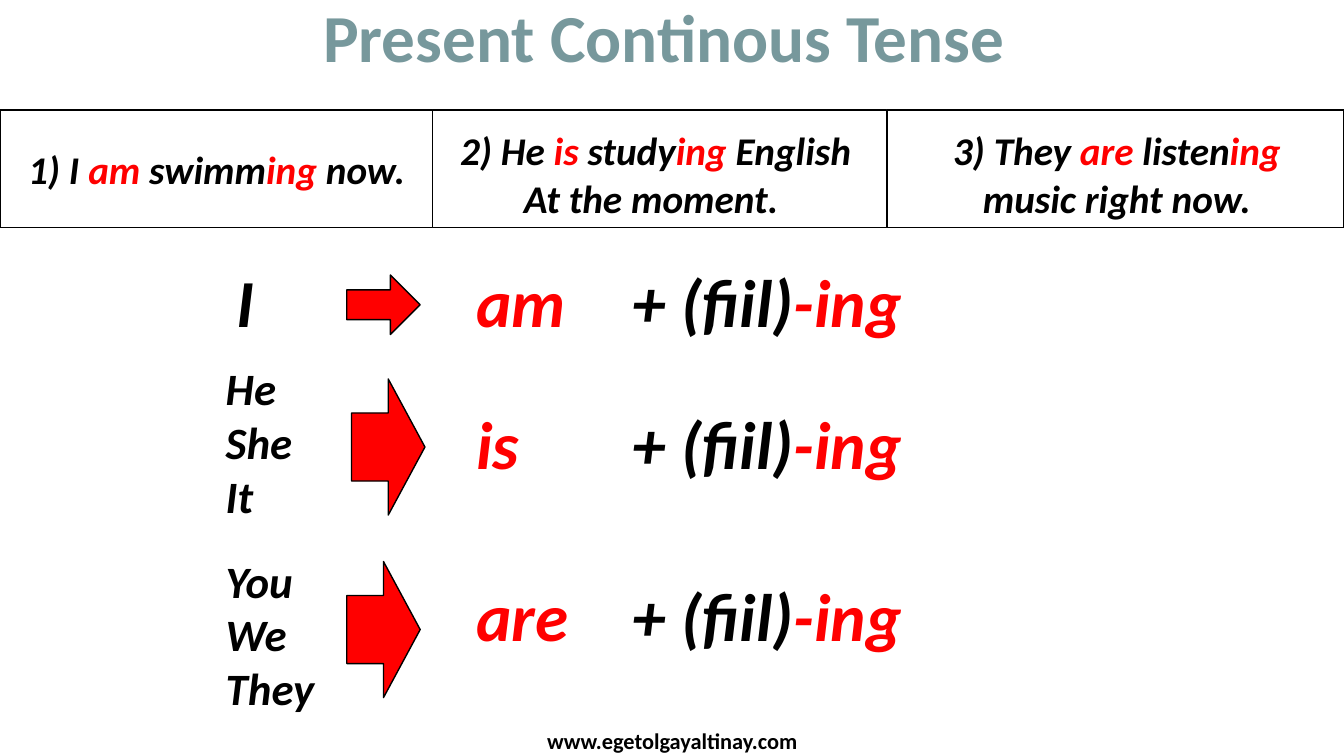
from pptx import Presentation
from pptx.dml.color import RGBColor
from pptx.enum.shapes import MSO_SHAPE
from pptx.enum.text import PP_ALIGN
from pptx.util import Cm, Pt

BLACK, WHITE, RED, TEAL = "000000", "FFFFFF", "FF0000", "77989C"
PAGE_WIDTH, PAGE_HEIGHT = 33.87, 19.05


def color(value):
    return RGBColor.from_string(value)


class TensePage:
    font_name = "Calibri"

    def __init__(self, page):
        self.page = page

    def shape(self, kind, left, top, width, height, fill, line=BLACK):
        shape = self.page.shapes.add_shape(kind, Cm(left), Cm(top), Cm(width), Cm(height))
        shape.shadow.inherit = False
        shape.fill.solid()
        shape.fill.fore_color.rgb = color(fill)
        shape.line.color.rgb = color(line)
        shape.line.width = Pt(1)

    def text(self, text, left, top, width, height, size=48, ink=BLACK,
             italic=True, centered=False):
        """Write one paragraph per line; parts between bars are red."""
        box = self.page.shapes.add_textbox(Cm(left), Cm(top), Cm(width), Cm(height))
        frame = box.text_frame
        frame.word_wrap = True
        for number, line in enumerate(text.split("\n")):
            para = frame.add_paragraph() if number else frame.paragraphs[0]
            para.alignment = PP_ALIGN.CENTER if centered else PP_ALIGN.LEFT
            for index, part in enumerate(line.split("|")):
                if not part:
                    continue
                span = para.add_run()
                span.text = part
                span.font.name = self.font_name
                span.font.size = Pt(size)
                span.font.bold = True
                span.font.italic = italic
                span.font.color.rgb = color(RED if index % 2 else ink)


def main():
    deck = Presentation()
    deck.slide_width, deck.slide_height = Cm(PAGE_WIDTH), Cm(PAGE_HEIGHT)
    tense = TensePage(deck.slides.add_slide(deck.slide_layouts[6]))

    frame_edges = [0, 10.9, 22.35, PAGE_WIDTH]
    for left, right in zip(frame_edges, frame_edges[1:]):
        tense.shape(MSO_SHAPE.RECTANGLE, left, 2.77, right - left, 2.97, WHITE)

    examples = [
        ("1) I |am |swimm|ing |now.", 0.46, 3.53, 10.9, 1.45, False),
        ("2) He |is |study|ing |English\nAt the moment. ", 10.69, 3.07, 11.66, 2.64, True),
        ("3) They |are |listen|ing |music right now.", 22.86, 3.07, 10.57, 2.64, True),
    ]
    for sentence, left, top, width, height, centered in examples:
        tense.text(sentence, left, top, width, height, size=28, centered=centered)

    tense.text("Present Continous Tense", 0.48, -0.25, 32.51, 2.31,
               ink=TEAL, italic=False, centered=True)

    # subjects, their left, top, height and size; arrow left, top, height; verb and its top
    rules = [
        ("I", 5.72, 6.43, 2.31, 48, 8.74, 6.93, 1.5, "am", 6.43),
        ("He\nShe\nIt", 5.44, 8.97, 4.37, 32, 8.86, 9.55, 3.43, "is", 10.01),
        ("You\nWe\nThey", 5.44, 13.82, 4.37, 32, 8.74, 14.15, 3.43, "are", 14.36),
    ]
    for (subjects, left, top, height, size,
         arrow_left, arrow_top, arrow_height, verb, verb_top) in rules:
        tense.text(subjects, left, top, 4.22, height, size=size)
        tense.shape(MSO_SHAPE.RIGHT_ARROW, arrow_left, arrow_top, 1.85, arrow_height, RED)
        tense.text(verb, 11.76, verb_top, 4.22, 2.31, ink=RED)
        tense.text("+ (fiil)|-ing", 15.7, verb_top, 11, 2.31)

    tense.text("www.egetolgayaltinay.com", 9.96, 18.21, 13.97, 0.94,
               size=16, italic=False, centered=True)
    deck.save("out.pptx")


if __name__ == "__main__":
    main()
